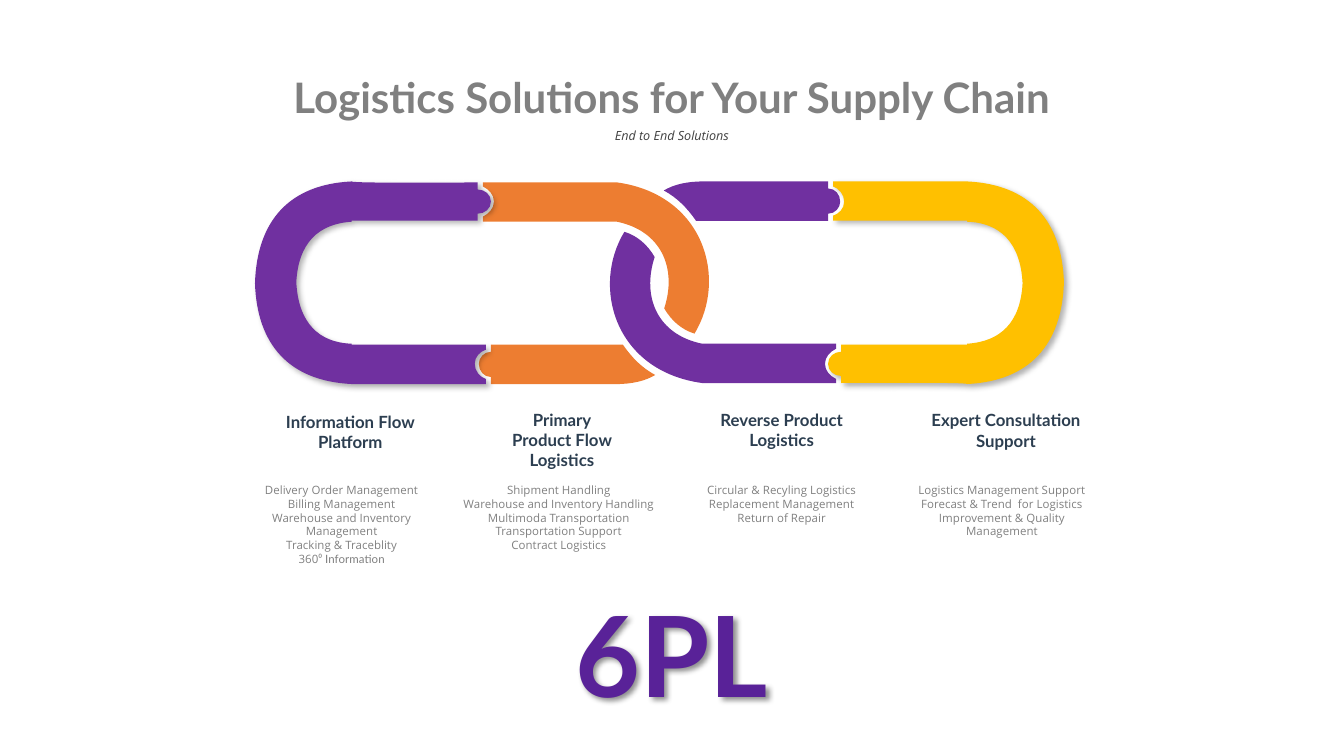
from lxml import etree
from pptx import Presentation
from pptx.dml.color import RGBColor
from pptx.enum.text import MSO_ANCHOR as Anchor, MSO_AUTO_SIZE as AutoSize, PP_ALIGN as Align
from pptx.oxml.ns import qn
from pptx.util import Inches, Pt

COLORS = {
    "orange": "ED7D31",
    "purple": "7030A0",
    "yellow": "FFC000",
    "violet": "592298",
    "grey": "808080",
    "charcoal": "404040",
    "navy": "2C3E50",
    "shadow": "000000",
}
CELLS_PER_INCH = 10
COLUMNS, ROWS = 133.33, 75
TURN_COLUMNS, TURN_ROWS = 130.85, 56.1
TIGHT = (0.5, 0.3)
ROOMY = (1, 0.5)

FRONT_ARC = [
    (47.9, 18.1), (61.2, 18.1),
    (69.9, 19.3, 72.2, 27.7, 68.9, 33.1),
    (67.6, 32.7, 66.6, 31.8, 65.9, 30.6),
    (67.2, 26.6, 65.6, 22.9, 61.2, 22),
    (47.9, 22), (47.9, 21.5),
    (48.5, 21.2, 49, 20.7, 49, 20),
    (49, 19.3, 48.5, 18.8, 47.9, 18.5),
]
BACK_BAR = [
    (65, 37.2),
    (64, 37.8, 62.7, 38.1, 61.1, 38.1),
    (48.7, 38.1), (48.7, 37.4),
    (48, 37.4, 47.5, 36.8, 47.5, 36.1),
    (47.5, 35.5, 48, 34.9, 48.7, 34.9),
    (48.7, 34.2), (61.8, 34.2),
    (62.7, 35.5, 63.7, 36.5, 65, 37.2),
]
OUTER_END = [
    (34.9, 18),
    (34.9, 18.2, 46.4, 18.1, 47.4, 18.1),
    (47.4, 18.8),
    (48.1, 18.8, 48.7, 19.3, 48.7, 20),
    (48.7, 20.7, 48.1, 21.2, 47.4, 21.2),
    (47.4, 21.9), (34.9, 21.9), (34.9, 22),
    (31.6, 22.2, 29.6, 24.1, 29.4, 28),
    (29.6, 32, 31.6, 34, 34.9, 34.1),
    (34.9, 34.2), (48.2, 34.2), (48.2, 34.7),
    (47.6, 34.9, 47.1, 35.4, 47.1, 36.1),
    (47.1, 36.8, 47.6, 37.4, 48.2, 37.6),
    (48.2, 38.1), (34.9, 38.1),
    (28.7, 37.8, 25.5, 34.2, 25.3, 28.1),
    (25.5, 21.9, 28.7, 18.3, 34.9, 18),
]
SERVICES = [
    ("Information Flow Platform", (24.05, 40.35, 21.4, 5), (23.2, 47.6, 21.4, 7.4),
     ["Delivery Order Management",
      "Billing Management\vWarehouse and Inventory Management",
      "Tracking & Traceblity",
      [("360", "Open Sans"), ("⁰ Information", "Lato")]]),
    ("Primary Product Flow Logistics", (49.15, 40.15, 13.2, 7.1), (44.6, 47.6, 21.7, 7.4),
     ["Shipment Handling",
      "Warehouse and Inventory Handling",
      "Multimoda Transportation\vTransportation Support",
      "Contract Logistics"]),
    ("Reverse Product Logistics", (68.75, 40.15, 17.6, 5), (68.5, 47.6, 18.1, 4.7),
     ["Circular & Recyling Logistics", "Replacement Management", "Return of Repair"]),
    ("Expert Consultation Support", (90.35, 40.2, 18.9, 5), (90.35, 47.6, 18.1, 6.1),
     ["Logistics Management Support",
      "Forecast & Trend  for Logistics",
      "Improvement & Quality Management"]),
]


def cells(count):
    return Inches(count / CELLS_PER_INCH)


def color(name):
    return RGBColor.from_string(COLORS[name])


def half_turn(outline):
    return [
        tuple((TURN_ROWS if i % 2 else TURN_COLUMNS) - value for i, value in enumerate(step))
        for step in outline
    ]


def add_shadow(shape, opacity):
    shape.shadow.inherit = False
    effects = shape._element.spPr.find(qn("a:effectLst"))
    outer = etree.SubElement(effects, qn("a:outerShdw"), blurRad=str(Pt(4)),
                             dist=str(Pt(3)), dir=str(45 * 60000), algn="tl", rotWithShape="0")
    tint = etree.SubElement(outer, qn("a:srgbClr"), val=COLORS["shadow"])
    etree.SubElement(tint, qn("a:alpha"), val=str(opacity * 1000))


def bend(link, steps):
    segments = iter(list(link._element.iter(qn("a:lnTo"))))
    for step in steps:
        segment = next(segments)
        if len(step) == 2:
            continue
        curve = etree.Element(qn("a:cubicBezTo"))
        segment.addprevious(curve)
        for part in (segment, next(segments), next(segments)):
            curve.append(part[0])
            part.getparent().remove(part)


def add_link(page, outline, fill, shadow=False):
    start, *steps = outline
    builder = page.shapes.build_freeform(*map(cells, start))
    points = [
        (cells(step[i]), cells(step[i + 1])) for step in steps for i in range(0, len(step), 2)
    ]
    builder.add_line_segments(points, close=True)
    link = builder.convert_to_shape()
    bend(link, steps)
    link.fill.solid()
    link.fill.fore_color.rgb = color(fill)
    link.line.fill.background()
    link.shadow.inherit = False
    if shadow:
        add_shadow(link, 30)


def add_text(page, area, lines, face, size, ink, bold=False, italic=False,
             inset=TIGHT, wrap=True, anchor=Anchor.TOP):
    box = page.shapes.add_textbox(*map(cells, area))
    frame = box.text_frame
    frame.word_wrap = wrap
    frame.auto_size = AutoSize.SHAPE_TO_FIT_TEXT
    frame.vertical_anchor = anchor
    frame.margin_left = frame.margin_right = cells(inset[0])
    frame.margin_top = frame.margin_bottom = cells(inset[1])
    for index, line in enumerate(lines):
        para = frame.add_paragraph() if index else frame.paragraphs[0]
        para.alignment = Align.CENTER
        font = para.font
        font.size, font.bold, font.italic = Pt(size), bold, italic
        font.color.rgb = color(ink)
        if isinstance(line, str):
            para.text = line
            font.name = face
        else:
            for text, span_face in line:
                span = para.add_run()
                span.text = text
                span.font.name = span_face
    return box


def main():
    deck = Presentation()
    deck.slide_width, deck.slide_height = cells(COLUMNS), cells(ROWS)
    page = deck.slides.add_slide(deck.slide_layouts[6])

    add_link(page, FRONT_ARC, "orange")
    add_link(page, BACK_BAR, "orange")
    add_link(page, half_turn(FRONT_ARC), "purple")
    add_link(page, half_turn(BACK_BAR), "purple")
    add_link(page, OUTER_END, "purple", shadow=True)
    add_link(page, half_turn(OUTER_END), "yellow", shadow=True)

    add_text(page, (22.65, 12.4, 88, 2), ["End to End Solutions"], "Open Sans", 9,
             "charcoal", italic=True, anchor=Anchor.MIDDLE)
    add_text(page, (27.2, 6.75, 78.9, 5.6), ["Logistics Solutions for Your Supply Chain"],
             "Lato", 30, "grey", bold=True, wrap=False)
    for heading, heading_area, detail_area, details in SERVICES:
        add_text(page, detail_area, details, "Open Sans", 8.25, "grey")
        add_text(page, heading_area, [heading], "Lato", 12, "navy", bold=True, inset=ROOMY)
    badge = add_text(page, (56.5, 57.75, 20.3, 14), ["6PL"], "Lato", 80, "violet",
                     bold=True, wrap=False)
    add_shadow(badge, 43)

    deck.save("out.pptx")


if __name__ == "__main__":
    main()
